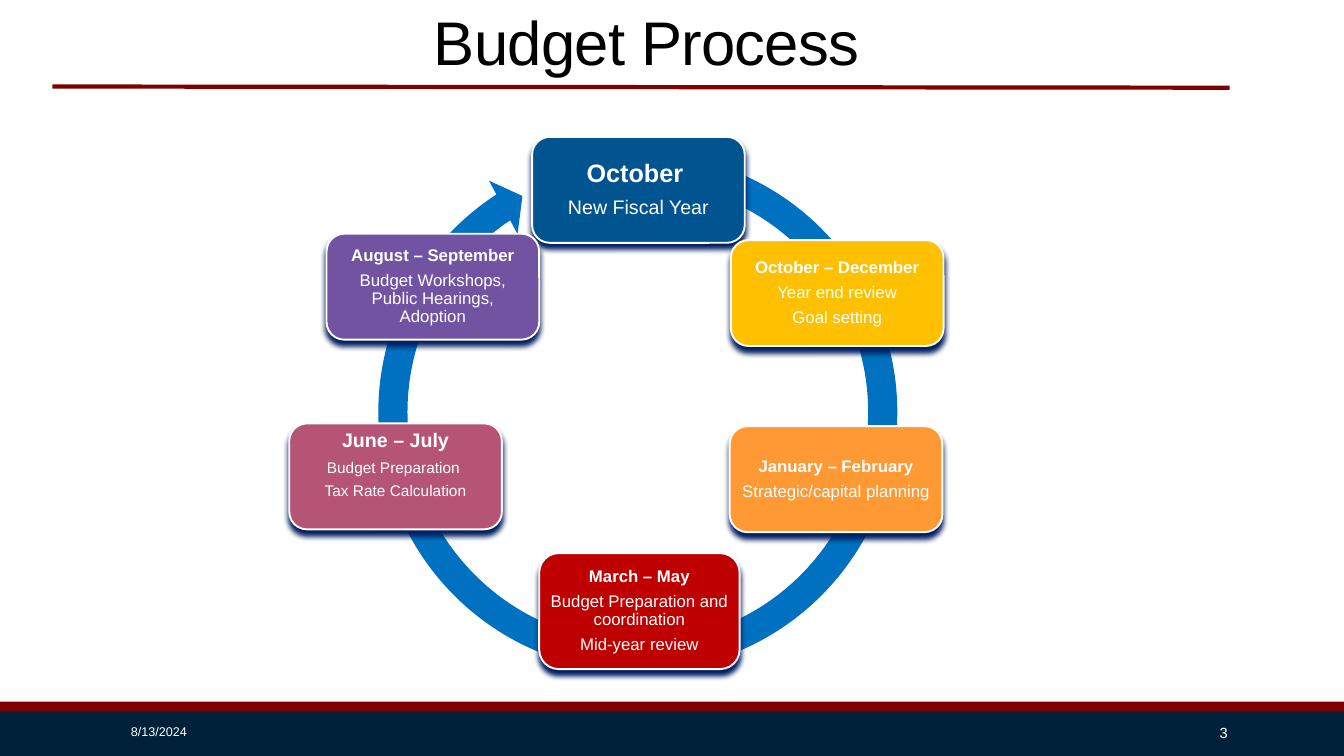
"""Build the Budget Process slide: a yearly cycle of six milestones."""
from lxml import etree
from pptx import Presentation
from pptx import util as u
from pptx.dml.color import RGBColor
from pptx.enum import shapes, text
from pptx.oxml.ns import qn

FONT = "Arial"
WHITE = RGBColor(0xFF, 0xFF, 0xFF)
BLACK = RGBColor(0x00, 0x00, 0x00)
MAROON = RGBColor(0x80, 0x00, 0x00)
NAVY = RGBColor(0x00, 0x21, 0x3A)
SHADOW = RGBColor(0x00, 0x20, 0x60)
CYCLE_BLUE = RGBColor(0x00, 0x70, 0xC0)
DEEP_BLUE = RGBColor(0x00, 0x54, 0x90)
GOLD = RGBColor(0xFF, 0xC0, 0x00)
ORANGE = RGBColor(0xFF, 0x99, 0x33)
RED = RGBColor(0xBF, 0x00, 0x00)
ROSE = RGBColor(0xB5, 0x54, 0x75)
PURPLE = RGBColor(0x71, 0x53, 0xA1)

CARD = (5.36, 2.67)
EVEN = (0.13, 0.13, 0.13, 0.13)
MILESTONES = [
    ((13.41, 3.45), CARD, DEEP_BLUE, (0.18, 0.18, 0.18, 0.18), (18, 14),
     ["October ", "New Fiscal Year"]),
    ((18.42, 6.05), CARD, GOLD, EVEN, (12, 12),
     ["October – December", "Year end review", "Goal setting"]),
    ((18.39, 10.74), CARD, ORANGE, EVEN, (12, 12),
     ["January – February", "Strategic/capital planning"]),
    ((13.59, 13.94), (5.05, 2.92), RED, EVEN, (12, 12),
     ["March – May", "Budget Preparation and coordination", "Mid-year review"]),
    ((7.29, 10.67), CARD, ROSE, (0.15, 0.05, 0.15, 0.61), (14, 11),
     ["June – July", "Budget Preparation ", "Tax Rate Calculation"]),
    ((8.23, 5.89), CARD, PURPLE, EVEN, (12, 12),
     ["August – September", "Budget Workshops, Public Hearings, Adoption"]),
]


def cm(*lengths):
    """Convert centimetre numbers to slide lengths."""
    return [u.Cm(length) for length in lengths]


def add_span(para, words, size, color, bold=False):
    """Add one formatted run to a paragraph."""
    span = para.add_run()
    span.text = words
    span.font.name = FONT
    span.font.size = u.Pt(size)
    span.font.bold = bold
    span.font.color.rgb = color
    return span


def add_filled(page, kind, place, color):
    """Add a borderless preset shape with a solid fill."""
    shape = page.shapes.add_shape(kind, *cm(*place))
    shape.shadow.inherit = False
    shape.fill.solid()
    shape.fill.fore_color.rgb = color
    shape.line.fill.background()
    return shape


def add_rule(page, start, end):
    """Add the maroon line under the title."""
    rule = page.shapes.add_connector(
        shapes.MSO_CONNECTOR.STRAIGHT, *cm(*start, *end))
    rule.line.color.rgb = MAROON
    rule.line.width = u.Pt(3)
    etree.SubElement(rule._element.spPr, qn("a:effectLst"))


def set_title(page, words):
    """Place and format the title placeholder."""
    title = page.shapes.title
    title.left, title.top, title.width, title.height = cm(1.37, 0.03, 29.85, 2.06)
    frame = title.text_frame
    frame.auto_size = text.MSO_AUTO_SIZE.NONE
    frame.vertical_anchor = text.MSO_ANCHOR.BOTTOM
    para = frame.paragraphs[0]
    para.alignment = text.PP_ALIGN.CENTER
    para.line_spacing = 0.85
    span = add_span(para, words, 44, BLACK)
    span._r.get_or_add_rPr().set("spc", "-50")


def add_footer(page, words, place, size, alignment):
    """Add one white text box on the bottom bar."""
    box = page.shapes.add_textbox(*cm(*place))
    frame = box.text_frame
    frame.word_wrap = True
    frame.vertical_anchor = text.MSO_ANCHOR.MIDDLE
    para = frame.paragraphs[0]
    para.alignment = alignment
    add_span(para, words, size, WHITE)


def add_cycle_arrow(page):
    """Add the circular arrow behind the milestones."""
    arrow = add_filled(page, shapes.MSO_SHAPE.CIRCULAR_ARROW,
                       (9.14, 3.45, 13.87, 13.87), CYCLE_BLUE)
    for index, value in enumerate((0.053, 3.126, 142.01, 171.429, 0.055)):
        arrow.adjustments[index] = value


def add_drop_shadow(shape):
    """Give a shape a soft navy shadow straight below it."""
    effects = shape._element.spPr.find(qn("a:effectLst"))
    shadow = etree.SubElement(
        effects, qn("a:outerShdw"), blurRad=str(u.Pt(4)), dist=str(u.Pt(4)),
        dir="5400000", algn="ctr", rotWithShape="0")
    etree.SubElement(shadow, qn("a:srgbClr"), val=str(SHADOW))


def add_milestone(page, corner, size, color, margins, font_sizes, lines):
    """Add one rounded card with a bold heading and its tasks."""
    card = add_filled(page, shapes.MSO_SHAPE.ROUNDED_RECTANGLE,
                      (*corner, *size), color)
    card.line.color.rgb = WHITE
    card.line.width = u.Pt(1.35)
    add_drop_shadow(card)
    frame = card.text_frame
    frame.word_wrap = True
    frame.vertical_anchor = text.MSO_ANCHOR.MIDDLE
    (frame.margin_left, frame.margin_top,
     frame.margin_right, frame.margin_bottom) = cm(*margins)
    for index, words in enumerate(lines):
        heading = index == 0
        para = frame.paragraphs[0] if heading else frame.add_paragraph()
        points = font_sizes[0] if heading else font_sizes[1]
        para.alignment = text.PP_ALIGN.CENTER
        para.line_spacing = 0.9
        para.space_after = u.Pt(round(0.4 * points, 1))
        add_span(para, words, points, WHITE, bold=heading)


def main():
    """Assemble and save the slide."""
    deck = Presentation()
    deck.slide_width, deck.slide_height = cm(33.87, 19.05)
    page = deck.slides.add_slide(deck.slide_layouts.get_by_name("Title Only"))
    bar = shapes.MSO_SHAPE.RECTANGLE
    add_filled(page, bar, (0, 17.68, 33.87, 1.27), MAROON)
    add_filled(page, bar, (0, 17.93, 33.87, 1.12), NAVY)
    add_rule(page, (1.32, 2.18), (30.99, 2.21))
    set_title(page, "Budget Process")
    add_footer(page, "3", (27.56, 17.96, 3.63, 1.02), 10.5, text.PP_ALIGN.RIGHT)
    add_footer(page, "8/13/2024", (3.05, 17.93, 6.86, 1.02), 9, text.PP_ALIGN.LEFT)
    add_cycle_arrow(page)
    for milestone in MILESTONES:
        add_milestone(page, *milestone)
    deck.save("out.pptx")


if __name__ == "__main__":
    main()
